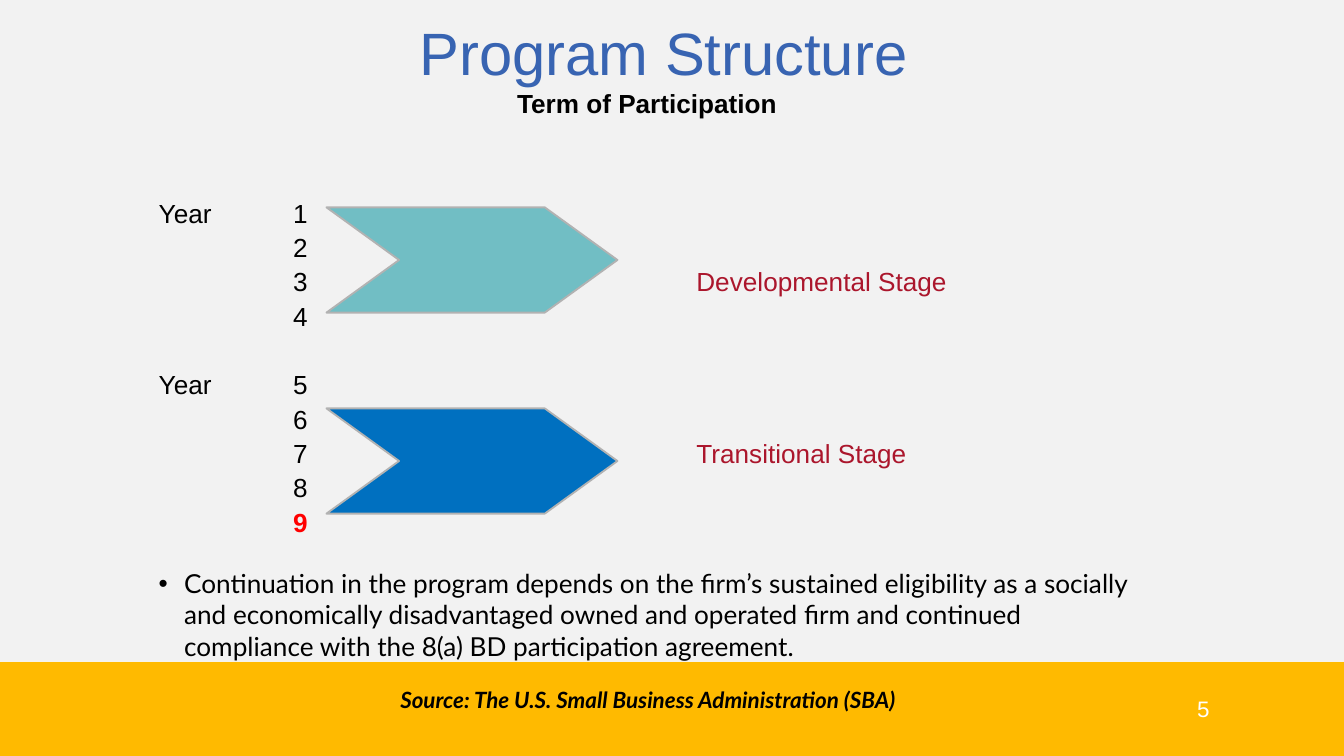
from dataclasses import dataclass

from lxml import etree
from pptx import Presentation
from pptx.dml.color import RGBColor
from pptx.enum.shapes import MSO_SHAPE
from pptx.enum.text import MSO_ANCHOR, MSO_AUTO_SIZE, PP_ALIGN
from pptx.oxml.ns import qn
from pptx.util import Cm, Pt

RECTANGLE, CHEVRON = MSO_SHAPE.RECTANGLE, MSO_SHAPE.CHEVRON
TOP, MIDDLE = MSO_ANCHOR.TOP, MSO_ANCHOR.MIDDLE
LEFT, CENTER, RIGHT = PP_ALIGN.LEFT, PP_ALIGN.CENTER, PP_ALIGN.RIGHT
NO_AUTOSIZE = MSO_AUTO_SIZE.NONE

COLORS = {
    "panel": "F2F2F2", "band": "FFBA00", "title": "3864B2", "text": "000000",
    "stage": "AB162C", "last_year": "FF0000", "number": "FFFFFF",
    "developmental": "71BEC4", "transitional": "0070C0", "outline": "B2B2B2",
}
SLIDE_WIDTH, SLIDE_HEIGHT, PANEL_HEIGHT = 25.4, 14.29, 12.51
ROW_PITCH = Pt(18.4)
TAB_WIDTH = 2.54


@dataclass
class Box:
    left: float
    top: float
    width: float
    height: float

    def lengths(self):
        return Cm(self.left), Cm(self.top), Cm(self.width), Cm(self.height)


@dataclass
class Style:
    size: float
    color: str
    font: str = "Arial"
    bold: bool = False
    italic: bool = False


@dataclass
class Stage:
    label: str
    label_year: int
    first_year: int
    last_year: int
    color: str
    arrow_top: float


STAGES = [
    Stage("Developmental Stage", 3, 1, 4, "developmental", 3.92),
    Stage("Transitional Stage", 7, 5, 9, "transitional", 7.72),
]
FINAL_YEAR = STAGES[-1].last_year
YEAR = Style(14, "text")
FINAL = Style(14, "last_year", bold=True)
STAGE = Style(14, "stage")


def color(name: str) -> RGBColor:
    return RGBColor.from_string(COLORS[name])


def style_run(run, style: Style) -> None:
    run.font.size = Pt(style.size)
    run.font.name = style.font
    run.font.bold = style.bold
    run.font.italic = style.italic
    run.font.color.rgb = color(style.color)


def write(paragraph, text: str, style: Style, align=LEFT, before: float = 0) -> None:
    paragraph.text = text
    paragraph.alignment = align
    paragraph.space_before = Pt(before)
    style_run(paragraph.runs[0], style)


def set_frame(frame, anchor, side: float = 0, vertical: float = 0) -> None:
    frame.word_wrap = True
    frame.auto_size = NO_AUTOSIZE
    frame.vertical_anchor = anchor
    frame.margin_left = frame.margin_right = Cm(side)
    frame.margin_top = frame.margin_bottom = Cm(vertical)


def place(shape, box: Box) -> None:
    shape.left, shape.top, shape.width, shape.height = box.lengths()


def set_list_format(paragraph, bullet: str = "", indent: float = 0) -> None:
    properties = paragraph._p.get_or_add_pPr()
    properties.set("marL", str(Cm(indent)))
    properties.set("indent", str(-Cm(indent)))
    properties.set("defTabSz", str(Cm(TAB_WIDTH)))
    if bullet:
        bullet_color = etree.SubElement(properties, qn("a:buClr"))
        etree.SubElement(bullet_color, qn("a:srgbClr"), val=COLORS["text"])
        etree.SubElement(properties, qn("a:buFont"), typeface="Arial")
        etree.SubElement(properties, qn("a:buChar"), char=bullet)
    else:
        etree.SubElement(properties, qn("a:buNone"))


def add_filled(slide, kind, box: Box, fill: str):
    shape = slide.shapes.add_shape(kind, *box.lengths())
    shape.shadow.inherit = False
    shape.fill.solid()
    shape.fill.fore_color.rgb = color(fill)
    return shape


def add_backdrop(slide, box: Box, fill: str) -> None:
    backdrop = add_filled(slide, RECTANGLE, box, fill)
    backdrop.line.fill.background()
    backdrop.element.getparent().insert(2, backdrop.element)


def add_arrow(slide, stage: Stage) -> None:
    arrow = add_filled(slide, CHEVRON, Box(6.17, stage.arrow_top, 5.5, 1.99), stage.color)
    arrow.adjustments[0] = 0.69
    arrow.line.color.rgb = color("outline")
    arrow.line.width = Pt(1)


def write_stage(frame, stage: Stage) -> None:
    for year in range(stage.first_year, stage.last_year + 1):
        row = frame.paragraphs[0] if year == 1 else frame.add_paragraph()
        set_list_format(row)
        starts = year == stage.first_year
        write(row, f"{'Year' if starts else ''}\t{year}",
              FINAL if year == FINAL_YEAR else YEAR,
              before=ROW_PITCH.pt if starts and year > 1 else 0)
        row.line_spacing = ROW_PITCH
        if year == stage.label_year:
            label = row.add_run()
            label.text = f"\t\t\t{stage.label}"
            style_run(label, STAGE)


def main() -> None:
    deck = Presentation()
    deck.slide_width, deck.slide_height = Cm(SLIDE_WIDTH), Cm(SLIDE_HEIGHT)
    slide = deck.slides.add_slide(deck.slide_layouts[1])
    title, body = slide.placeholders

    add_backdrop(slide, Box(0, 0, SLIDE_WIDTH, PANEL_HEIGHT), "panel")
    add_backdrop(slide, Box(0, PANEL_HEIGHT, SLIDE_WIDTH, SLIDE_HEIGHT - PANEL_HEIGHT), "band")

    place(title, Box(1.75, 0.08, 21.59, 1.78))
    set_frame(title.text_frame, MIDDLE)
    write(title.text_frame.paragraphs[0], "Program Structure", Style(32, "title"), CENTER)

    page_number = slide.shapes.add_textbox(*Box(17.78, 12.95, 5.08, 0.89).lengths()).text_frame
    set_frame(page_number, MIDDLE)
    write(page_number.paragraphs[0], "5", Style(12, "number"), RIGHT)

    subtitle = slide.shapes.add_textbox(*Box(4.42, 1.52, 15.62, 0.86).lengths()).text_frame
    set_frame(subtitle, TOP, 0.25, 0.13)
    write(subtitle.paragraphs[0], "Term of Participation", Style(14, "text", bold=True), CENTER)

    place(body, Box(2.75, 3.67, 19, 10))
    schedule = body.text_frame
    set_frame(schedule, TOP, 0.25)
    for stage in STAGES:
        write_stage(schedule, stage)
        add_arrow(slide, stage)

    condition = schedule.add_paragraph()
    set_list_format(condition, "•", 0.48)
    write(condition, "Continuation in the program depends on the firm’s sustained eligibility "
          "as a socially and economically disadvantaged owned and operated firm and continued "
          "compliance with the 8(a) BD participation agreement.",
          Style(14, "text", "Lato"), before=16)

    source = schedule.add_paragraph()
    set_list_format(source)
    write(source, "Source: The U.S. Small Business Administration (SBA)",
          Style(12, "text", "Lato", bold=True, italic=True), CENTER, 13)

    deck.save("out.pptx")


if __name__ == "__main__":
    main()
